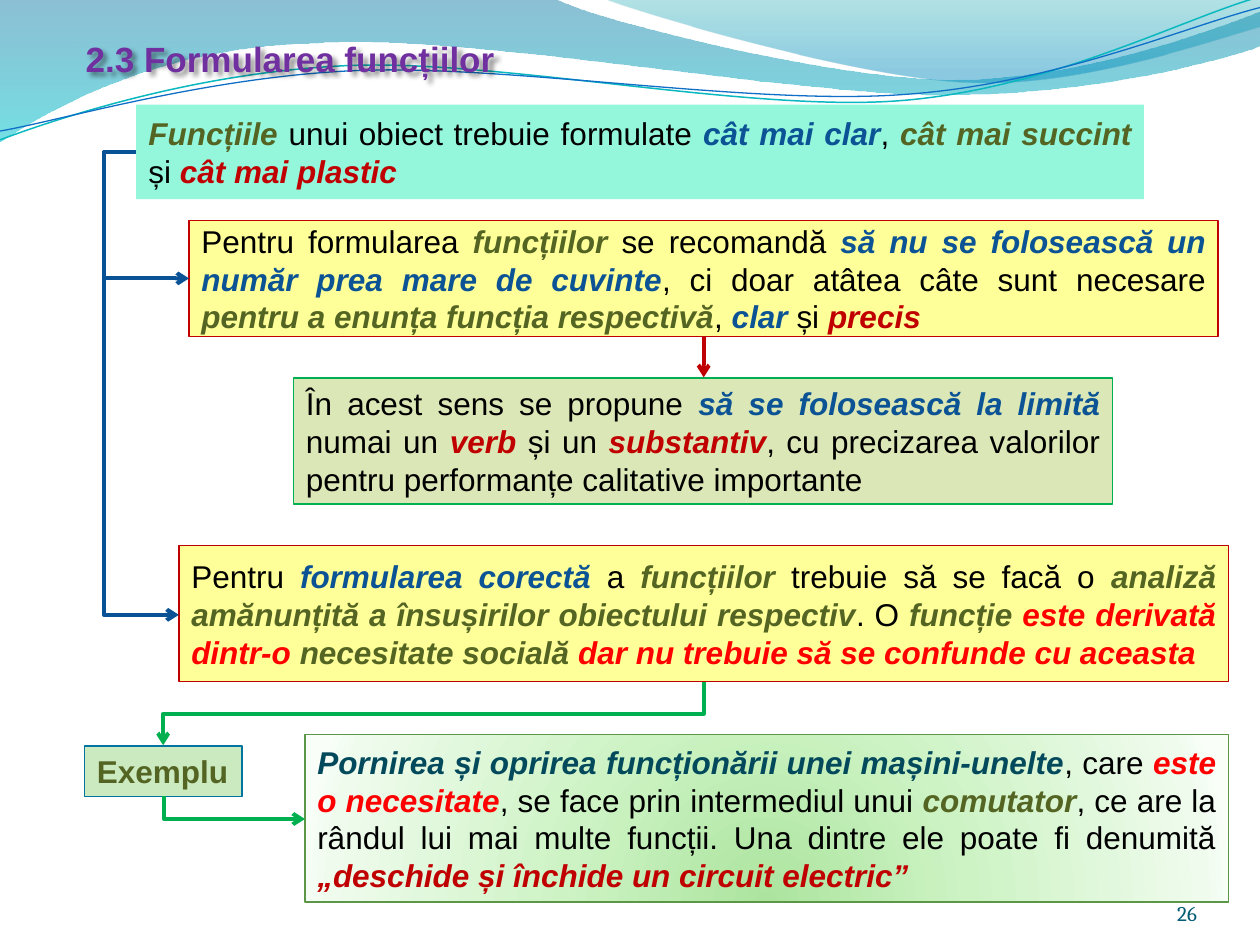
from math import cos, radians, sin

from lxml import etree
from pptx import Presentation
from pptx.dml.color import RGBColor
from pptx.enum.shapes import MSO_CONNECTOR, MSO_SHAPE
from pptx.enum.text import MSO_ANCHOR, MSO_AUTO_SIZE, PP_ALIGN
from pptx.oxml import parse_xml
from pptx.oxml.ns import nsdecls, qn
from pptx.util import Inches, Pt

ELBOW = MSO_CONNECTOR.ELBOW
RECTANGLE = MSO_SHAPE.RECTANGLE
MIDDLE, TOP, BOTTOM = MSO_ANCHOR.MIDDLE, MSO_ANCHOR.TOP, MSO_ANCHOR.BOTTOM
LEFT, RIGHT, JUSTIFY = PP_ALIGN.LEFT, PP_ALIGN.RIGHT, PP_ALIGN.JUSTIFY
FIT_TEXT = MSO_AUTO_SIZE.SHAPE_TO_FIT_TEXT

BLACK = RGBColor(0x00, 0x00, 0x00)
OLIVE = RGBColor(0x54, 0x64, 0x22)
BLUE = RGBColor(0x0B, 0x53, 0x94)
ARROW_BLUE = RGBColor(0x09, 0x52, 0x95)
DARK_RED = RGBColor(0xC0, 0x00, 0x00)
RED = RGBColor(0xFF, 0x00, 0x00)
GREEN = RGBColor(0x00, 0xB0, 0x50)
LEAF = RGBColor(0x5B, 0x97, 0x47)
TEAL = RGBColor(0x03, 0x49, 0x5C)
PURPLE = RGBColor(0x70, 0x30, 0xA0)
NUMBER_TEAL = RGBColor(0x04, 0x5D, 0x75)
MINT = RGBColor(0x94, 0xF7, 0xDC)
YELLOW = RGBColor(0xFF, 0xFF, 0x99)
SAGE = RGBColor(0xDB, 0xE7, 0xB6)
PALE_GREEN = RGBColor(0xCB, 0xEA, 0xC0)
OCEAN = RGBColor(0x00, 0x74, 0xA1)
WAVE_CYAN = RGBColor(0x0A, 0xB8, 0xBF)
WAVE_BLUE = RGBColor(0x0F, 0x6F, 0xC6)

DOWNWARD = '<a:lin ang="5400000" scaled="1"/>'
FROM_BELOW = ('<a:path path="circle"><a:fillToRect l="50000" t="130000" '
              'r="50000" b="-30000"/></a:path>')


def set_gradient(shape, stops, direction):
    shape.fill.gradient()
    old = shape._element.spPr.find(qn("a:gradFill"))
    marks = ""
    for pos, color, alpha in stops:
        opacity = f'<a:alpha val="{alpha * 1000}"/>' if alpha < 100 else ""
        marks += f'<a:gs pos="{pos * 1000}"><a:srgbClr val="{color}">{opacity}</a:srgbClr></a:gs>'
    old.getparent().replace(old, parse_xml(
        f'<a:gradFill {nsdecls("a")} rotWithShape="1"><a:gsLst>{marks}</a:gsLst>'
        f'{direction}</a:gradFill>'))


def add_run(paragraph, text, color, size=18, font="Arial", bold=False, italic=False):
    run = paragraph.add_run()
    run.text = text
    run.font.size = Pt(size)
    run.font.name = font
    run.font.bold = bold
    run.font.italic = italic
    run.font.color.rgb = color


prs = Presentation()
prs.slide_width, prs.slide_height = Inches(10), Inches(7.5)
slide = prs.slides.add_slide(prs.slide_layouts[5])
shapes = slide.shapes

waves = [
    ([(0, 0), (4.4, -0.01), (4.76, 0.17, 6.64, 0.63, 7.58, 0.63),
      (8.53, 0.63, 9.58, 0.26, 10, 0.09), (10.01, 0.36),
      (9.83, 0.44, 8.7, 0.76, 7.46, 0.75), (6.22, 0.75, 3.82, 0.28, 2.57, 0.34),
      (1.29, 0.36, 0.46, 0.83, -0.01, 1.13), (0, 0)],
     [(0, "0074A1", 45), (100, "00C6CF", 55)], None, 0, 0),
    ([(4.79, -0.01), (5.09, 0.11, 6.82, 0.62, 7.69, 0.65),
      (8.56, 0.69, 9.61, 0.32, 10, 0.21), (10, 0), (4.79, -0.01)],
     [(0, "00A1A9", 30), (80, "008BBF", 45)], None, 0, 0),
    ([(0, 1.11), (0.48, 0.93, 1.58, 0.57, 2.77, 0.52),
      (3.95, 0.47, 5.93, 0.89, 7.13, 0.8), (8.33, 0.71, 9.38, 0.15, 9.98, -0.02)],
     None, WAVE_CYAN, 0.85, -2.7),
    ([(0, 1.04), (0.47, 0.96, 1.64, 0.61, 2.83, 0.56),
      (4.03, 0.51, 5.97, 0.84, 7.17, 0.75), (8.36, 0.67, 9.41, 0.21, 10, 0.06)],
     None, WAVE_BLUE, 0.75, -2.7),
]
PIVOT_X, PIVOT_Y = 4.99, 0.58
master_tree = prs.slide_master.shapes._spTree
for depth, (segments, stops, line_color, line_width, tilt) in enumerate(waves):
    turn = radians(-tilt)
    points = []
    for segment in segments:
        for x, y in zip(segment[::2], segment[1::2]):
            dx, dy = x - PIVOT_X, y - PIVOT_Y
            points.append((Inches(PIVOT_X + dx * cos(turn) - dy * sin(turn)),
                           Inches(PIVOT_Y + dx * sin(turn) + dy * cos(turn))))
    builder = shapes.build_freeform(*points[0])
    builder.add_line_segments(points[1:], close=stops is not None)
    wave = builder.convert_to_shape()
    corners = iter(list(wave._element.iter(qn("a:lnTo"))))
    for segment in segments[1:]:
        corner = next(corners)
        if len(segment) == 6:
            curve = etree.Element(qn("a:cubicBezTo"))
            corner.addprevious(curve)
            for control in (corner, next(corners), next(corners)):
                curve.append(control[0])
                control.getparent().remove(control)
    wave.rotation = tilt
    wave.shadow.inherit = False
    if stops:
        set_gradient(wave, stops, DOWNWARD)
        wave.line.fill.background()
    else:
        wave.fill.background()
        wave.line.color.rgb = line_color
        wave.line.width = Pt(line_width)
    master_tree.insert(2 + depth, wave._element)

title = shapes.title
title.left, title.top = Inches(0.58), Inches(0.25)
title.width, title.height = Inches(3.47), Inches(0.44)
title.text_frame.word_wrap = False
title.text_frame.auto_size = FIT_TEXT
title.text_frame.vertical_anchor = TOP
heading = title.text_frame.paragraphs[0]
heading.alignment = LEFT
add_run(heading, "2.3 Formularea funcțiilor", PURPLE, 20, bold=True)
title._element.spPr.append(parse_xml(
    f'<a:effectLst {nsdecls("a")}><a:outerShdw blurRad="38100" dist="38100" dir="2700000">'
    '<a:srgbClr val="000000"><a:alpha val="43000"/></a:srgbClr></a:outerShdw></a:effectLst>'))

statements = [
    (1.08, 0.83, 8, 0.75, MINT, None, 0, [
        ("Funcțiile ", OLIVE), ("unui obiect trebuie formulate ", BLACK),
        ("cât mai clar", BLUE), (", ", BLACK), ("cât mai succint ", OLIVE),
        ("și ", BLACK), ("cât mai plastic", DARK_RED)]),
    (1.5, 1.75, 8.17, 0.92, YELLOW, DARK_RED, 1, [
        ("Pentru formularea ", BLACK), ("funcțiilor ", OLIVE), ("se recomandă ", BLACK),
        ("să nu se folosească un număr prea mare de cuvinte", BLUE),
        (", ci doar atâtea câte sunt necesare ", BLACK),
        ("pentru a enunța funcția respectivă", OLIVE), (", ", BLACK),
        ("clar", BLUE), (" și ", BLACK), ("precis", DARK_RED)]),
    (2.33, 3, 6.5, 1, SAGE, GREEN, 1, [
        ("În acest sens se propune ", BLACK), ("să se folosească la limită ", BLUE),
        ("numai un ", BLACK), ("verb", DARK_RED), (" și un ", BLACK),
        ("substantiv", DARK_RED),
        (", cu precizarea valorilor pentru performanțe calitative importante", BLACK)]),
    (0.67, 5.92, 1.25, 0.4, PALE_GREEN, OCEAN, 0.75, [("Exemplu", OLIVE)]),
    (1.42, 4.33, 8.33, 1.08, YELLOW, DARK_RED, 1, [
        ("Pentru ", BLACK), ("formularea corectă ", BLUE), ("a ", BLACK),
        ("funcțiilor", OLIVE), (" trebuie să se facă o ", BLACK),
        ("analiză amănunțită a însușirilor obiectului respectiv", OLIVE),
        (". O ", BLACK), ("funcție ", OLIVE), ("este derivată dintr-o ", RED),
        ("necesitate socială ", OLIVE),
        ("dar nu trebuie să se confunde cu aceasta", RED)]),
    (2.42, 5.83, 7.33, 1.33, None, LEAF, 0.75, [
        ("Pornirea și oprirea funcționării unei mașini-unelte", TEAL),
        (", care ", BLACK), ("este o necesitate", RED),
        (", se face prin intermediul unui ", BLACK), ("comutator", OLIVE),
        (", ce are la rândul lui mai multe funcții. Una dintre ele poate fi denumită ", BLACK),
        ("„deschide și închide un circuit electric”", DARK_RED)]),
]
for left, top, width, height, fill, border, border_width, phrases in statements:
    box = shapes.add_shape(RECTANGLE, Inches(left), Inches(top), Inches(width), Inches(height))
    box.shadow.inherit = False
    if fill:
        box.fill.solid()
        box.fill.fore_color.rgb = fill
    else:
        set_gradient(box, [(0, "ACE49F", 100), (43, "CDF3C4", 100),
                           (93, "EFFBED", 100), (100, "F9FFF8", 100)], FROM_BELOW)
    if border:
        box.line.color.rgb = border
        box.line.width = Pt(border_width)
    else:
        box.line.fill.background()
    is_label = len(phrases) == 1
    frame = box.text_frame
    frame.word_wrap = not is_label
    frame.vertical_anchor = TOP if is_label else MIDDLE
    if is_label:
        frame.auto_size = FIT_TEXT
    frame.paragraphs[0].alignment = LEFT if is_label else JUSTIFY
    for text, color in phrases:
        emphasis = color != BLACK
        add_run(frame.paragraphs[0], text, color, bold=emphasis,
                italic=emphasis and not is_label)

arrows = [
    (1.08, 1.21, 1.5, 2.21, 0, -0.6, ARROW_BLUE),
    (5.42, 2.83, 5.75, 2.83, 90, 0.5, DARK_RED),
    (1.08, 1.21, 1.42, 4.88, 0, -0.75, ARROW_BLUE),
    (3.19, 3.52, 3.69, 7.81, 90, 0.5, GREEN),
    (1.95, 5.85, 1.77, 6.97, 270, None, GREEN),
]
for x0, y0, x1, y1, rotation, bend, color in arrows:
    arrow = shapes.add_connector(ELBOW, Inches(x0), Inches(y0), Inches(x1), Inches(y1))
    arrow.line.color.rgb = color
    arrow.line.width = Pt(2.25)
    properties = arrow._element.spPr
    properties.find(qn("a:xfrm")).set("rot", str(rotation * 60000))
    geometry = properties.find(qn("a:prstGeom"))
    if bend is None:
        geometry.set("prst", "bentConnector2")
    else:
        etree.SubElement(geometry.find(qn("a:avLst")), qn("a:gd"),
                         name="adj1", fmla=f"val {round(bend * 100000)}")
    etree.SubElement(properties.find(qn("a:ln")), qn("a:tailEnd"), type="arrow")
    etree.SubElement(properties, qn("a:effectLst"))

number_frame = shapes.add_textbox(Inches(8.67), Inches(6.95), Inches(0.83), Inches(0.4)).text_frame
number_frame.word_wrap = True
number_frame.vertical_anchor = BOTTOM
number_frame.margin_left = number_frame.margin_right = 0
number_frame.margin_top = number_frame.margin_bottom = 0
number_frame.paragraphs[0].alignment = RIGHT
add_run(number_frame.paragraphs[0], "26", NUMBER_TEAL, 12, "Cambria")

prs.save("out.pptx")
